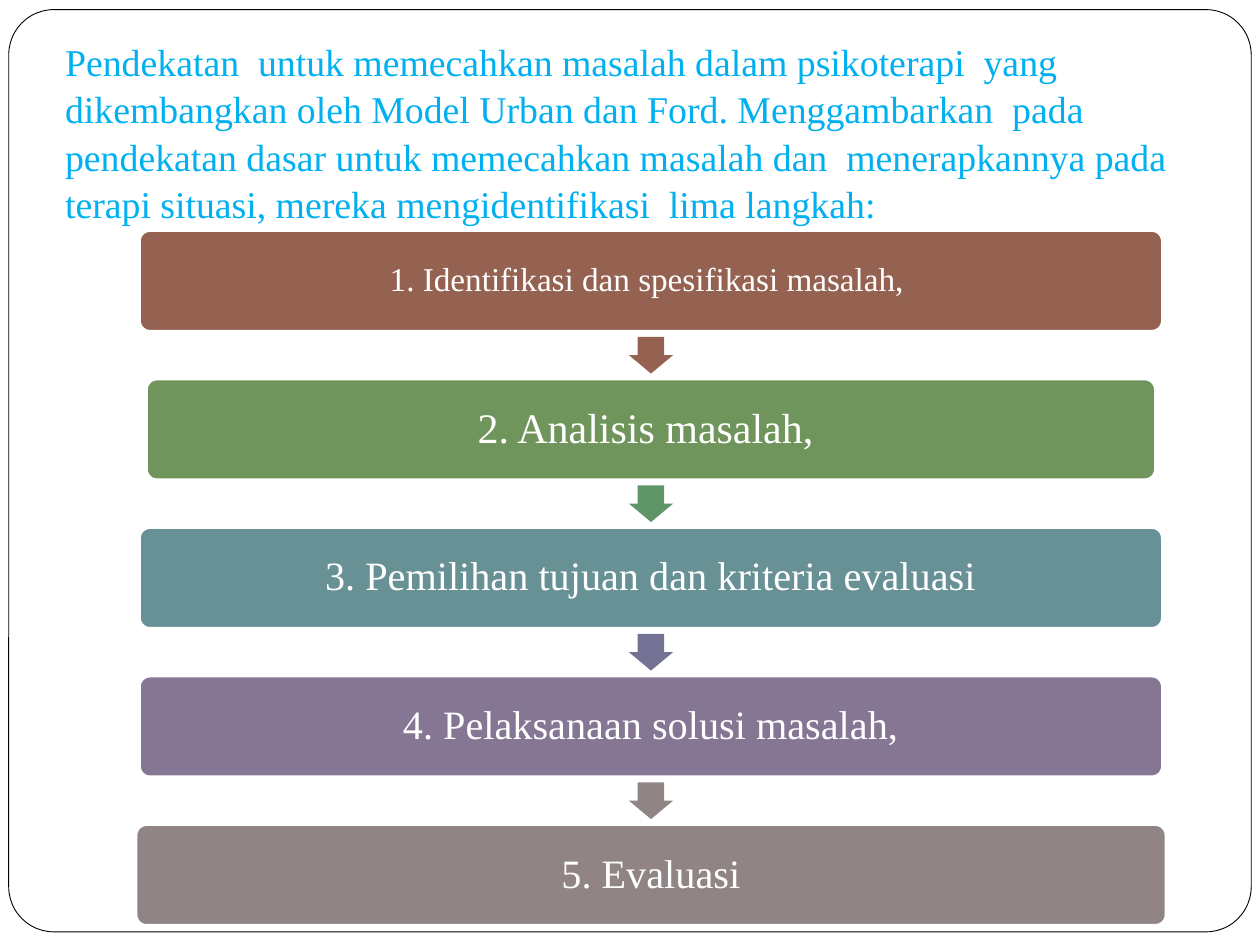
from dataclasses import dataclass

import pptx
import pptx.dml.color
import pptx.enum.shapes
import pptx.enum.text
import pptx.util

Pt = pptx.util.Pt
RGB = pptx.dml.color.RGBColor.from_string
SHAPE = pptx.enum.shapes.MSO_SHAPE
ANCHOR = pptx.enum.text.MSO_ANCHOR
ALIGN = pptx.enum.text.PP_ALIGN


@dataclass(frozen=True)
class Theme:
    """Colours and type sizes of the slide."""
    font: str = "Times New Roman"
    title: str = "00B0F0"
    white: str = "FFFFFF"
    frame: str = "000000"
    title_size: float = 21.6
    steps: tuple = ("956251", "6F955C", "689195", "857693", "918485")
    arrows: tuple = ("956251", "609568", "737294", "918485")
    step_sizes: tuple = (19, 24, 23, 23, 23)


THEME = Theme()
TITLE = ("Pendekatan  untuk memecahkan masalah dalam psikoterapi  yang "
         "dikembangkan oleh Model Urban dan Ford. Menggambarkan  pada "
         "pendekatan dasar untuk memecahkan masalah dan  menerapkannya pada "
         "terapi situasi, mereka mengidentifikasi  lima langkah:")
STEPS = (
    ("1. Identifikasi dan spesifikasi masalah, ", 584),
    ("2. Analisis masalah, ", 576),
    ("3. Pemilihan tujuan dan kriteria evaluasi", 584),
    ("4. Pelaksanaan solusi masalah,", 584),
    ("5. Evaluasi", 588),
)


def write(tf, text, size, color, align, anchor, spacing, insets):
    """Fill a text frame with one formatted paragraph."""
    tf.word_wrap = True
    tf.auto_size = pptx.enum.text.MSO_AUTO_SIZE.NONE
    tf.vertical_anchor = anchor
    tf.margin_left, tf.margin_top, tf.margin_right, tf.margin_bottom = map(Pt, insets)
    p = tf.paragraphs[0]
    p.alignment, p.line_spacing = align, spacing
    r = p.add_run()
    r.text = text
    r.font.name, r.font.size, r.font.color.rgb = THEME.font, Pt(size), RGB(color)


def add_block(s, kind, box, adjust, fill=None, line=None, width=1):
    """Add a preset shape with optional fill and line."""
    sp = s.shapes.add_shape(kind, *map(Pt, box))
    sp.shadow.inherit = False
    for i, value in enumerate(adjust):
        sp.adjustments[i] = value
    if fill:
        sp.fill.solid()
        sp.fill.fore_color.rgb = RGB(fill)
    else:
        sp.fill.background()
    if line:
        sp.line.color.rgb, sp.line.width = RGB(line), Pt(width)
    else:
        sp.line.fill.background()
    return sp


def add_title(s, box):
    """Place and format the title placeholder."""
    sp = s.shapes.title
    sp.left, sp.top, sp.width, sp.height = map(Pt, box)
    write(sp.text_frame, TITLE, THEME.title_size, THEME.title, ALIGN.LEFT,
          ANCHOR.BOTTOM, 1.04, (7.2, 3.6, 7.2, 33))


def add_process(s, box, step_height=57, arrow_width=25.2, arrow_height=21):
    """Stack the steps evenly in the box with an arrow in each gap."""
    left, top, width, height = box
    center = left + width / 2
    pitch = (height - step_height) / (len(STEPS) - 1)
    gap = pitch - step_height
    for i, (text, step_width) in enumerate(STEPS):
        y = top + i * pitch
        sp = add_block(s, SHAPE.ROUNDED_RECTANGLE,
                       (center - step_width / 2, y, step_width, step_height),
                       (0.1,), THEME.steps[i], THEME.white)
        write(sp.text_frame, text, THEME.step_sizes[i], THEME.white,
              ALIGN.CENTER, ANCHOR.MIDDLE, 0.9, (7.2,) * 4)
        if i < len(THEME.arrows):
            arrow_top = y + step_height + (gap - arrow_height) / 2
            add_block(s, SHAPE.DOWN_ARROW,
                      (center - arrow_width / 2, arrow_top, arrow_width, arrow_height),
                      (0.6, 0.5), THEME.arrows[i])


def main():
    """Build and save the slide."""
    prs = pptx.Presentation()
    prs.slide_width, prs.slide_height = Pt(720), Pt(540)
    s = prs.slides.add_slide(prs.slide_layouts[5])
    s.background.fill.solid()
    s.background.fill.fore_color.rgb = RGB(THEME.white)
    add_block(s, SHAPE.ROUNDED_RECTANGLE, (5, 5.5, 710, 527), (0.049,),
              line=THEME.frame, width=0.5)
    add_title(s, (30, 24, 678, 138))
    add_process(s, (78, 132, 588, 396.5))
    prs.save("out.pptx")


if __name__ == "__main__":
    main()
